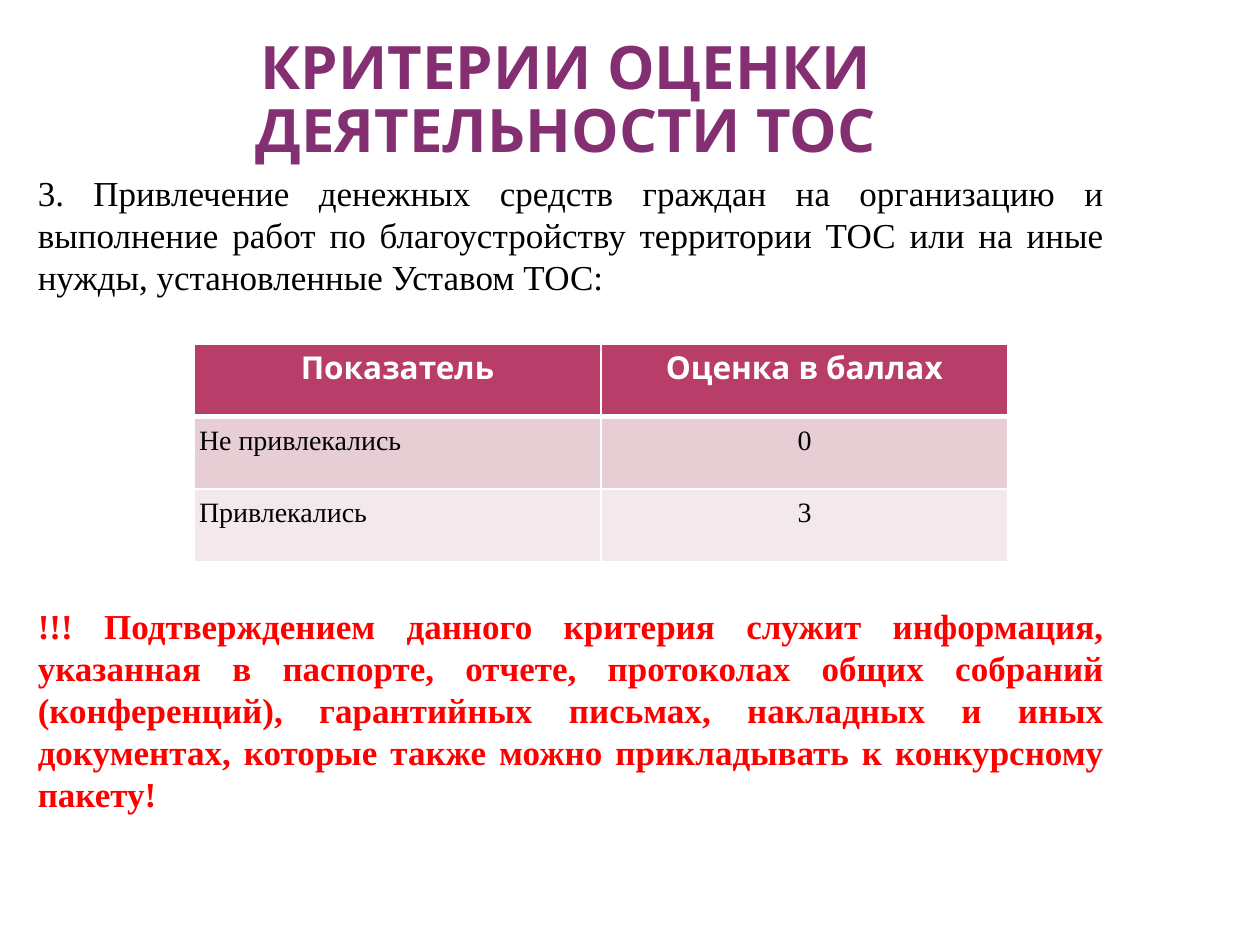
from pptx import Presentation
from pptx.dml.color import RGBColor
from pptx.enum import text
from pptx.oxml import parse_xml
from pptx.oxml.ns import nsdecls
from pptx.util import Pt

TITLE = "КРИТЕРИИ ОЦЕНКИ ДЕЯТЕЛЬНОСТИ ТОС"
RULE = (
    "3. Привлечение денежных средств граждан на организацию и выполнение "
    "работ по благоустройству территории ТОС или на иные нужды, "
    "установленные Уставом ТОС:"
)
PROOF = (
    "!!! Подтверждением данного критерия служит информация, указанная в "
    "паспорте, отчете, протоколах общих собраний (конференций), гарантийных "
    "письмах, накладных и иных документах, которые также можно прикладывать "
    "к конкурсному пакету!"
)
SCORES = [
    ("Показатель", "Оценка в баллах"),
    ("Не привлекались", "0"),
    ("Привлекались", "3"),
]

THEME = {
    "head": ("Karla", 34.2, "852F73", True),
    "rule": ("Times New Roman", 20, "000000", False),
    "proof": ("Times New Roman", 20, "FF0000", True),
    "label": ("Karla", 18, "FFFFFF", True),
    "cell": ("Times New Roman", 16, "000000", False),
    "fills": ("B83D68", "E6CED4", "F3E8EB"),
    "border": "FFFFFF",
}
ALIGN = text.PP_ALIGN


def style(par, kind, align):
    par.alignment = align
    for run in par.runs:
        name, size, color, bold = THEME[kind]
        run.font.name, run.font.size, run.font.bold = name, Pt(size), bold
        run.font.color.rgb = RGBColor.from_string(color)


def add_note(slide, words, kind, top, height):
    box = slide.shapes.add_textbox(Pt(8.64), Pt(top), Pt(629.28), Pt(height))
    frame = box.text_frame
    frame.word_wrap = True
    frame.margin_left = Pt(12.96)
    frame.text = words
    par = frame.paragraphs[0]
    par.line_spacing = Pt(24)
    style(par, kind, ALIGN.JUSTIFY)


def add_border(cell, side, width):
    cell._tc.get_or_add_tcPr().append(parse_xml(
        f'<a:{side} {nsdecls("a")} w="{Pt(width)}"><a:solidFill>'
        f'<a:srgbClr val="{THEME["border"]}"/></a:solidFill></a:{side}>'
    ))


def add_scores(slide):
    frame = slide.shapes.add_table(
        len(SCORES), 2, Pt(110.88), Pt(196.56), Pt(465.12), Pt(124.56))
    table = frame.table
    for r, row in enumerate(SCORES):
        for c, words in enumerate(row):
            cell = table.cell(r, c)
            for side in ("lnL", "lnR", "lnT", "lnB"):
                thick = (r, side) in ((0, "lnB"), (1, "lnT"))
                add_border(cell, side, 3 if thick else 1)
            cell.fill.solid()
            cell.fill.fore_color.rgb = RGBColor.from_string(THEME["fills"][r])
            cell.text = words
            if r:
                cell.margin_left = cell.margin_right = Pt(2.88)
                cell.margin_top = cell.margin_bottom = Pt(5.04)
            align = ALIGN.JUSTIFY if r and c == 0 else ALIGN.CENTER
            style(cell.text_frame.paragraphs[0], "cell" if r else "label", align)


def add_title(slide):
    title = slide.shapes.title
    title.left, title.top = Pt(14.4), Pt(21.6)
    title.width, title.height = Pt(617.76), Pt(72.72)
    frame = title.text_frame
    frame.text = TITLE
    frame.word_wrap = True
    frame.auto_size = text.MSO_AUTO_SIZE.NONE
    frame.vertical_anchor = text.MSO_ANCHOR.BOTTOM
    frame.margin_left = frame.margin_right = Pt(3.6)
    frame.margin_top = frame.margin_bottom = 0
    par = frame.paragraphs[0]
    par.line_spacing = 0.87
    style(par, "head", ALIGN.CENTER)


def main():
    deck = Presentation()
    deck.slide_width, deck.slide_height = Pt(720), Pt(540)
    slide = deck.slides.add_slide(deck.slide_layouts[5])
    add_title(slide)
    add_note(slide, RULE, "rule", 94.32, 80)
    add_note(slide, PROOF, "proof", 341.8, 128)
    add_scores(slide)
    deck.save("out.pptx")


if __name__ == "__main__":
    main()
